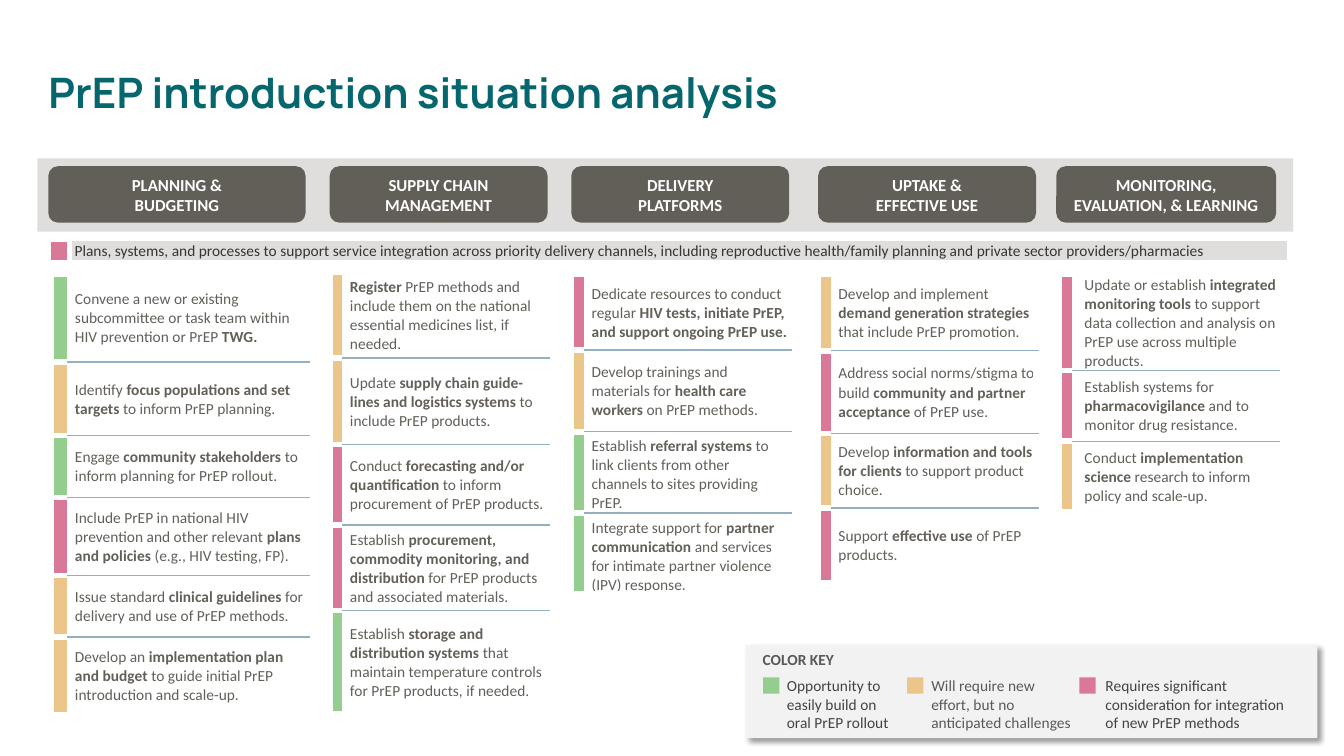
from dataclasses import dataclass

from lxml import etree
from pptx import Presentation
from pptx import util as u
from pptx.dml.color import RGBColor
from pptx.enum import shapes, text
from pptx.oxml import ns


@dataclass(frozen=True)
class Theme:
    title_font: str = "Manrope"
    body_font: str = "Calibri"
    title_size: int = 30
    heading_size: int = 12
    body_size: int = 11
    title: str = "05676D"
    body: str = "635F59"
    dark: str = "353535"
    key_dark: str = "434343"
    key_light: str = "595959"
    heading: str = "625E58"
    band: str = "DFDEDC"
    key_panel: str = "F2F2F2"
    rule: str = "94B0BC"
    white: str = "FFFFFF"
    easy: str = "93CE8E"
    effort: str = "EBC589"
    major: str = "D97997"


@dataclass(frozen=True)
class Step:
    """One table row; bold passages stand between double asterisks."""
    color: str
    height: float
    wording: str
    top_margin: float = 0.03


def subelement(parent, tag, **attributes):
    return etree.SubElement(parent, ns.qn(tag), **attributes)


class SlideBuilder:
    def __init__(self, theme, slide):
        self.theme = theme
        self.slide = slide

    def style(self, frame, size, color, bold=None, font=None):
        for paragraph in frame.paragraphs:
            for run in paragraph.runs:
                run.font.name = font or self.theme.body_font
                run.font.size = u.Pt(size)
                run.font.color.rgb = RGBColor.from_string(color)
                if bold is not None:
                    run.font.bold = bold

    def title(self, wording):
        title = self.slide.shapes.title
        title.left, title.top = u.Cm(-1.02), u.Cm(0.81)
        title.width, title.height = u.Cm(33.17), u.Cm(3.18)
        frame = title.text_frame
        frame.text = wording
        frame.margin_left = u.Cm(2.24)
        frame.vertical_anchor = text.MSO_ANCHOR.MIDDLE
        frame.auto_size = text.MSO_AUTO_SIZE.NONE
        frame.paragraphs[0].alignment = text.PP_ALIGN.LEFT
        frame.paragraphs[0].line_spacing = 0.9
        self.style(frame, self.theme.title_size, self.theme.title, True, self.theme.title_font)

    def box(self, left, top, width, height, color, kind=shapes.MSO_SHAPE.RECTANGLE, on=None):
        target = on or self.slide.shapes
        box = target.add_shape(kind, u.Cm(left), u.Cm(top), u.Cm(width), u.Cm(height))
        box.shadow.inherit = False
        box.fill.solid()
        box.fill.fore_color.rgb = RGBColor.from_string(color)
        box.line.fill.background()
        return box

    def heading(self, left, width, wording):
        heading = self.box(left, 4.19, width, 1.42, self.theme.heading,
                           shapes.MSO_SHAPE.ROUNDED_RECTANGLE)
        frame = heading.text_frame
        frame.text = wording
        frame.word_wrap = True
        frame.vertical_anchor = text.MSO_ANCHOR.MIDDLE
        for paragraph in frame.paragraphs:
            paragraph.alignment = text.PP_ALIGN.CENTER
        self.style(frame, self.theme.heading_size, self.theme.white, True)

    def label(self, left, top, width, height, wording, color, bold=False, on=None):
        target = on or self.slide.shapes
        label = target.add_textbox(u.Cm(left), u.Cm(top), u.Cm(width), u.Cm(height))
        label.text_frame.text = wording
        label.text_frame.word_wrap = True
        self.style(label.text_frame, self.theme.body_size, color, bold)

    def cast_shadow(self, box):
        effects = box.element.spPr.find(ns.qn("a:effectLst"))
        shadow = subelement(effects, "a:outerShdw", blurRad=str(u.Pt(4)), dist=str(u.Pt(3)),
                            dir=str(45 * 60000), algn="tl", rotWithShape="0")
        tint = subelement(shadow, "a:srgbClr", val="000000")
        subelement(tint, "a:alpha", val="40000")

    def borders(self, cell, **sides):
        properties = cell._tc.get_or_add_tcPr()
        for side in "LRTB":
            color, points = sides.get(side, (self.theme.white, 4.5))
            line = subelement(properties, f"a:ln{side}", w=str(u.Pt(points)))
            subelement(subelement(line, "a:solidFill"), "a:srgbClr", val=color)

    def fill_cell(self, cell, color):
        if color:
            cell.fill.solid()
            cell.fill.fore_color.rgb = RGBColor.from_string(color)
        else:
            cell.fill.background()

    def steps(self, left, top, bar, width, steps, indent=0.13, ink=None, backing=None):
        height = sum(step.height for step in steps)
        table = self.slide.shapes.add_table(len(steps), 2, u.Cm(left), u.Cm(top),
                                            u.Cm(bar + width), u.Cm(height)).table
        table.first_row = table.horz_banding = False
        table.columns[0].width, table.columns[1].width = u.Cm(bar), u.Cm(width)
        rule = (self.theme.rule, 1)
        for index, step in enumerate(steps):
            table.rows[index].height = u.Cm(step.height)
            marker, entry = table.cell(index, 0), table.cell(index, 1)
            # Colour marker
            marker.margin_left = marker.margin_right = 0
            marker.margin_top = marker.margin_bottom = 0
            subelement(marker.text_frame.paragraphs[0]._p, "a:endParaRPr", sz="800")
            self.borders(marker)
            self.fill_cell(marker, step.color)
            # Wording with bold passages
            entry.margin_left, entry.margin_right = u.Cm(indent), u.Cm(0.03)
            entry.margin_top, entry.margin_bottom = u.Cm(step.top_margin), 0
            entry.vertical_anchor = text.MSO_ANCHOR.MIDDLE
            for part, passage in enumerate(step.wording.split("**")):
                if passage:
                    run = entry.text_frame.paragraphs[0].add_run()
                    run.text = passage
                    run.font.bold = part % 2 == 1
            self.style(entry.text_frame, self.theme.body_size, ink or self.theme.body)
            inner = {"T": rule if index else (self.theme.white, 3)}
            if index < len(steps) - 1:
                inner["B"] = rule
            self.borders(entry, **inner)
            self.fill_cell(entry, backing)

    def color_key(self, entries):
        group = self.slide.shapes.add_group_shape().shapes
        panel = self.box(18.8, 16.26, 14.4, 2.34, self.theme.key_panel, on=group)
        self.cast_shadow(panel)
        for swatch_left, color, left, width, wording, ink in entries:
            self.box(swatch_left, 17.07, 0.41, 0.41, color, on=group)
            self.label(left, 16.92, width, 1.68, wording, ink, on=group)
        self.label(18.97, 16.26, 7.37, 0.74, "COLOR KEY", self.theme.key_light, True, group)


def main():
    theme = Theme()
    easy, effort, major = theme.easy, theme.effort, theme.major
    deck = Presentation()
    deck.slide_width, deck.slide_height = u.Cm(33.87), u.Cm(19.05)
    page = SlideBuilder(theme, deck.slides.add_slide(deck.slide_layouts[5]))
    page.title("PrEP introduction situation analysis")

    # Steps of each stage
    planning = [
        Step(easy, 2.21, "Convene a new or existing subcommittee or task team within HIV prevention or PrEP **TWG.**"),
        Step(effort, 1.85, "Identify **focus populations and set targets **to inform PrEP planning."),
        Step(easy, 1.57, "Engage **community stakeholders **to inform planning for PrEP rollout."),
        Step(major, 1.96, "Include PrEP in national HIV prevention and other relevant **plans and policies **(e.g., HIV testing, FP)."),
        Step(effort, 1.55, "Issue standard** clinical guidelines **for delivery and use of PrEP methods."),
        Step(effort, 1.96, "Develop an** implementation plan and budget **to guide initial PrEP introduction and scale-up.")]
    supply = [
        Step(effort, 2.16, "**Register** PrEP methods and include them on the national essential medicines list, if needed."),
        Step(effort, 2.18, "Update **supply chain guide-lines and logistics systems **to include PrEP products."),
        Step(major, 2.03, "Conduct **forecasting and/or quantification **to inform procurement of PrEP products."),
        Step(major, 2.16, "Establish **procurement, commodity monitoring, and distribution **for PrEP products and associated materials."),
        Step(easy, 2.59, "Establish **storage and distribution systems **that maintain temperature controls for PrEP products, if needed.")]
    delivery = [
        Step(major, 1.91, "Dedicate resources to conduct regular **HIV tests, initiate PrEP, and support ongoing PrEP use.**"),
        Step(effort, 2.06, "Develop trainings and materials for **health care workers **on PrEP methods."),
        Step(easy, 1.91, "Establish **referral systems **to link clients from other channels to sites providing PrEP.", 0.13),
        Step(easy, 1.8, "Integrate support for **partner communication** and services for intimate partner violence (IPV) response.", 0.13)]
    uptake = [
        Step(effort, 1.93, "Develop and implement **demand generation strategies **that include PrEP promotion."),
        Step(major, 2.08, "Address social norms/stigma to build **community and partner acceptance** of PrEP use."),
        Step(effort, 1.88, "Develop **information and tools for clients **to support product choice."),
        Step(major, 1.88, "Support **effective use **of PrEP products.")]
    monitoring = [
        Step(major, 2.36, "Update or establish** integrated monitoring tools** to support data collection and analysis on PrEP use across multiple products."),
        Step(major, 1.78, "Establish systems for **pharmacovigilance** and to monitor drug resistance."),
        Step(effort, 1.78, "Conduct **implementation science **research to inform policy and scale-up.")]
    page.steps(1.3, 6.91, 0.46, 5.97, planning)
    page.steps(8.31, 6.86, 0.38, 5.11, supply)
    page.steps(14.4, 6.91, 0.38, 5.11, delivery)
    page.steps(20.62, 6.91, 0.38, 5.11, uptake)
    page.steps(26.7, 6.91, 0.38, 5.11, monitoring, indent=0.25)

    # Stage headings on their band
    page.box(0.94, 3.99, 31.65, 1.85, theme.band)
    for left, width, wording in [(1.22, 6.48, "PLANNING &\nBUDGETING"),
                                 (8.31, 5.49, "SUPPLY CHAIN MANAGEMENT"),
                                 (14.4, 5.49, "DELIVERY\nPLATFORMS"),
                                 (20.62, 5.49, "UPTAKE &\nEFFECTIVE USE"),
                                 (26.62, 5.54, "MONITORING, EVALUATION, & LEARNING")]:
        page.heading(left, width, wording)

    # Strip across all stages
    integration = Step(major, 0.61, "Plans, systems, and processes to support service integration across priority delivery channels, "
                       "including reproductive health/family planning and private sector providers/pharmacies")
    page.steps(1.22, 6.02, 0.53, 30.76, [integration], ink=theme.dark, backing=theme.band)

    # Colour key
    page.color_key([
        (19.23, easy, 19.58, 3.28, "Opportunity to easily build on oral PrEP rollout", theme.key_dark),
        (22.86, effort, 23.22, 4.09, "Will require new effort, but no anticipated challenges", theme.key_light),
        (27.2, major, 27.61, 5.31, "Requires significant consideration for integration of new PrEP methods", theme.key_dark)])
    deck.save("out.pptx")


if __name__ == "__main__":
    main()
